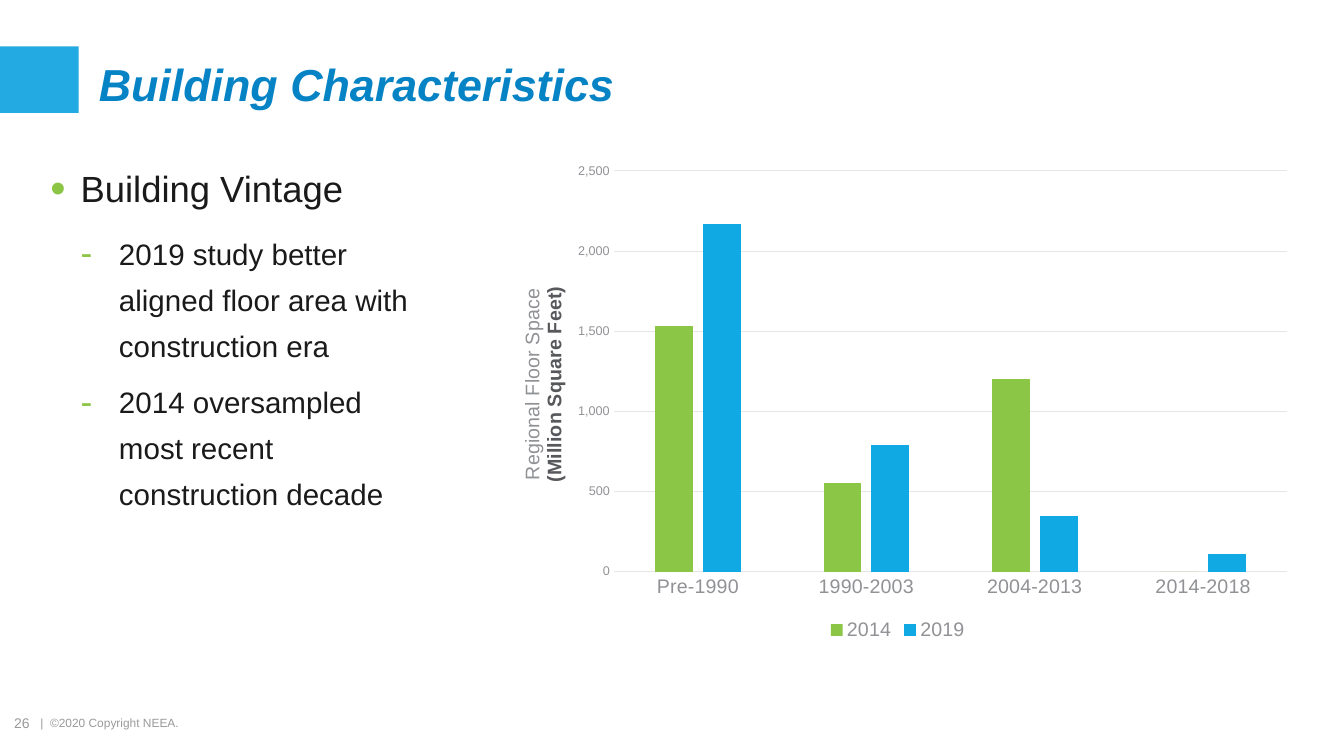
from pptx import Presentation
from pptx.chart.data import CategoryChartData
from pptx.dml.color import RGBColor
from pptx.enum.chart import XL_CHART_TYPE as CT, XL_LEGEND_POSITION as LP, XL_TICK_MARK as TM
from pptx.enum.shapes import MSO_SHAPE as SHAPE
from pptx.enum.text import MSO_ANCHOR as ANCHOR, MSO_AUTO_SIZE as FIT, PP_ALIGN as ALIGN
from pptx.oxml import parse_xml
from pptx.oxml.ns import nsdecls, qn
from pptx.util import Pt

SCALE = 9144


def px(n):
    return n * SCALE


def rgb(value):
    return RGBColor.from_string(value)


def set_all(obj, values):
    for name, value in values.items():
        setattr(obj, name, value)


class Deck:
    font = "Arial"
    blue, green, sky = "24AAE2", "8CC546", "11A9E3"
    gray, light, dark, grid = "919296", "999999", "57585B", "E6E6E7"

    def __init__(self, width, height):
        self.prs = Presentation()
        set_all(self.prs, {"slide_width": px(width), "slide_height": px(height)})

    def add_slide(self):
        self.slide = self.prs.slides.add_slide(self.prs.slide_layouts[1])

    def style(self, font, size, color, **extra):
        set_all(font, {"name": self.font, "size": Pt(size), **extra})
        font.color.rgb = rgb(color)

    def place(self, sp, left, top, width, height):
        set_all(sp, {"left": px(left), "top": px(top),
                     "width": px(width), "height": px(height)})

    def run(self, p, text, size, color, **extra):
        r = p.add_run()
        r.text = text
        self.style(r.font, size, color, **extra)

    def block(self, box, color):
        sp = self.slide.shapes.add_shape(SHAPE.RECTANGLE, *map(px, box))
        sp.shadow.inherit = False
        sp.fill.solid()
        sp.fill.fore_color.rgb = rgb(color)
        sp.line.fill.background()

    def frame(self, sp, **extra):
        tf = sp.text_frame
        set_all(tf, {"word_wrap": True, "auto_size": FIT.NONE, **extra})
        return tf

    def text(self, box, text, size):
        sp = self.slide.shapes.add_textbox(*map(px, box))
        tf = self.frame(sp, margin_left=0, margin_top=0, margin_right=0, margin_bottom=0)
        self.run(tf.paragraphs[0], text, size, self.light)

    def title(self, box, text):
        sp = self.slide.shapes.title
        self.place(sp, *box)
        tf = self.frame(sp, margin_left=0, margin_top=0, margin_right=0, margin_bottom=0,
                        vertical_anchor=ANCHOR.MIDDLE)
        p = tf.paragraphs[0]
        p.alignment = ALIGN.LEFT
        self.run(p, text, 32, "0583C5", bold=True, italic=True)

    def bullets(self, box, items):
        levels = [
            ("•", 30, 30, 26, {"line_spacing": 1.0, "space_after": Pt(10.9)}),
            ("-", 68, 38, 21.1, {"line_spacing": 1.3, "space_after": Pt(7.3)}),
        ]
        sp = self.slide.placeholders[1]
        self.place(sp, *box)
        tf = self.frame(sp)
        for i, (level, text) in enumerate(items):
            p = tf.add_paragraph() if i else tf.paragraphs[0]
            char, left, hang, size, spacing = levels[level]
            pPr = p._p.get_or_add_pPr()
            pPr.set("marL", str(px(left)))
            pPr.set("indent", str(-px(hang)))
            for xml in (f'<a:buClr {nsdecls("a")}><a:srgbClr val="{self.green}"/></a:buClr>',
                        f'<a:buSzPct {nsdecls("a")} val="120000"/>',
                        f'<a:buFont {nsdecls("a")} typeface="{self.font}"/>',
                        f'<a:buChar {nsdecls("a")} char="{char}"/>'):
                pPr.append(parse_xml(xml))
            set_all(p, {"level": level, "space_before": Pt(0), **spacing})
            self.run(p, text, size, "1A1A1A")

    def layout(self, parent, index, target="", **fractions):
        for old in parent.findall(qn("c:layout")):
            parent.remove(old)
        inner = f'<c:layoutTarget val="{target}"/>' if target else ""
        inner += '<c:xMode val="edge"/><c:yMode val="edge"/>'
        inner += "".join(f'<c:{k} val="{v}"/>' for k, v in fractions.items())
        parent.insert(index, parse_xml(
            f'<c:layout {nsdecls("c")}><c:manualLayout>{inner}</c:manualLayout></c:layout>'))

    def hairline(self, line):
        line.width = Pt(0.75)
        line.color.rgb = rgb(self.grid)

    def axis_title(self, axis, lines):
        title = axis.axis_title
        tf = title.text_frame
        for i, (text, color, bold) in enumerate(lines):
            p = tf.add_paragraph() if i else tf.paragraphs[0]
            self.run(p, text, 14, color, bold=bold)
        element = title._element
        body = element.find(".//" + qn("a:bodyPr"))
        body.set("rot", "-5400000")
        body.set("vert", "horz")
        self.layout(element, 1, x=0.03, y=0.26)

    def columns(self, box, cats, series, title):
        data = CategoryChartData(number_format="#,##0")
        data.categories = cats
        for name, values, _ in series:
            data.add_series(name, values)
        chart = self.slide.shapes.add_chart(CT.COLUMN_CLUSTERED, *map(px, box), data).chart
        self.style(chart.font, 10, self.dark)
        set_all(chart, {"has_title": False, "has_legend": True})
        set_all(chart.legend, {"position": LP.BOTTOM, "include_in_layout": False})
        self.style(chart.legend.font, 14, self.gray)

        plot = chart.plots[0]
        set_all(plot, {"gap_width": 219, "overlap": -27, "vary_by_categories": False})
        for ser, (_, _, color) in zip(plot.series, series):
            ser.format.fill.solid()
            ser.format.fill.fore_color.rgb = rgb(color)

        cat, val = chart.category_axis, chart.value_axis
        for axis, size in ((cat, 14), (val, 9)):
            set_all(axis, {"major_tick_mark": TM.NONE, "minor_tick_mark": TM.NONE})
            self.style(axis.tick_labels.font, size, self.gray)
        self.hairline(cat.format.line)
        set_all(val, {"minimum_scale": 0, "maximum_scale": 2500, "major_unit": 500,
                      "has_major_gridlines": True})
        set_all(val.tick_labels, {"number_format": "#,##0", "number_format_is_linked": False})
        self.hairline(val.major_gridlines.format.line)
        val.format.line.fill.background()
        self.axis_title(val, title)
        area = chart._chartSpace.find(".//" + qn("c:plotArea"))
        self.layout(area, 0, "inner", x=0.15, y=0.03, w=0.83, h=0.82)


def main():
    deck = Deck(1333, 750)
    deck.add_slide()
    deck.block((0, 46, 78, 66), deck.blue)
    deck.text((40, 710, 212, 15), "|  ©2020 Copyright NEEA.", 8.5)
    deck.title((98, 53, 1139, 60), "Building Characteristics")
    deck.text((14, 709, 26, 17), "26", 10)
    deck.bullets((40, 160, 390, 378), [
        (0, "Building Vintage"),
        (1, "2019 study better aligned floor area with construction era"),
        (1, "2014 oversampled most recent construction decade"),
    ])
    deck.columns(
        (488, 155, 805, 485),
        ["Pre-1990", "1990-2003", "2004-2013", "2014-2018"],
        [("2014", (1530, 550, 1200, 0), "8CC646"),
         ("2019", (2170, 790, 350, 110), deck.sky)],
        [("Regional Floor Space", deck.gray, False),
         ("(Million Square Feet)", deck.dark, True)],
    )
    deck.prs.save("out.pptx")


if __name__ == "__main__":
    main()
